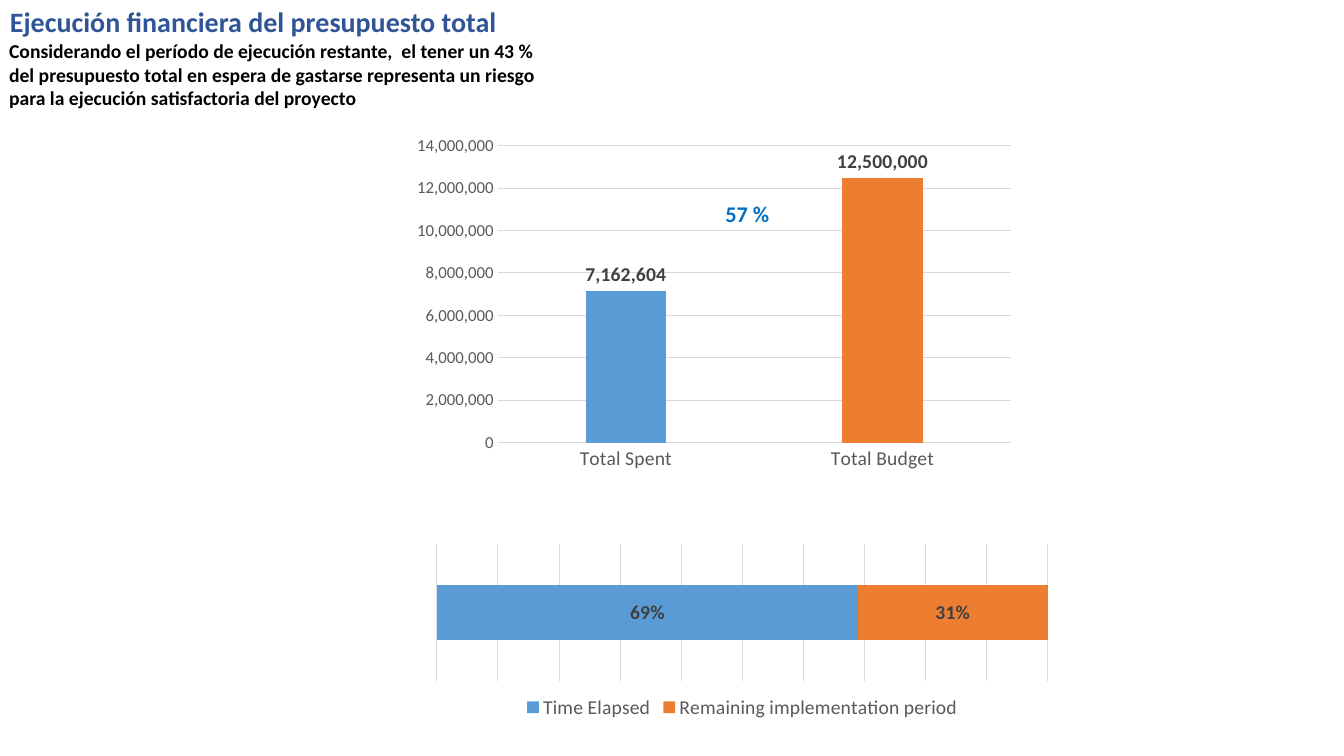
from dataclasses import dataclass

from lxml import etree
from pptx import Presentation
from pptx.chart.chart import Chart
from pptx.chart.data import CategoryChartData
from pptx.dml.color import RGBColor
from pptx.enum.chart import XL_CHART_TYPE, XL_LABEL_POSITION, XL_LEGEND_POSITION, XL_TICK_MARK
from pptx.oxml.ns import qn
from pptx.slide import Slide
from pptx.util import Cm, Pt

COLUMNS = XL_CHART_TYPE.COLUMN_CLUSTERED
STACKED_BARS = XL_CHART_TYPE.BAR_STACKED_100
ABOVE_BAR = XL_LABEL_POSITION.OUTSIDE_END
INSIDE_BAR = XL_LABEL_POSITION.CENTER
LEGEND_BELOW = XL_LEGEND_POSITION.BOTTOM
NO_TICKS = XL_TICK_MARK.NONE

FONT = "Calibri"
BLUE, ORANGE = "5B9BD5", "ED7D31"
GRID, AXIS_TEXT, LABEL_TEXT = "D9D9D9", "595959", "404040"


@dataclass(frozen=True)
class Frame:
    """Place and size in centimetres."""
    left: float
    top: float
    width: float
    height: float


@dataclass(frozen=True)
class TextItem:
    text: str
    frame: Frame
    size: int
    color: str


@dataclass(frozen=True)
class BarChart:
    kind: XL_CHART_TYPE
    frame: Frame
    plot_area: Frame  # fractions of the chart frame
    categories: tuple[str, ...]
    series: dict[str, tuple[float, ...]]
    number_format: str
    label_position: XL_LABEL_POSITION
    gap: int
    overlap: int
    scale: dict[str, float]


TEXTS = (
    TextItem("Ejecución financiera del presupuesto total",
             Frame(0, 0, 18.69, 1.47), 20, "2F5597"),
    TextItem("Considerando el período de ejecución restante,  el tener un 43 % "
             "del presupuesto total en espera de gastarse representa un riesgo "
             "para la ejecución satisfactoria del proyecto",
             Frame(-0.02, 0.86, 14.38, 1.17), 14, "000000"),
    TextItem("57 %", Frame(18.03, 4.93, 2.62, 0.94), 16, "0070C0"),
)

BUDGET = BarChart(
    COLUMNS, Frame(9.22, 3.05, 17.48, 10.39), Frame(0.19, 0.06, 0.74, 0.72),
    ("Total Spent", "Total Budget"), {"Series 1": (7162604, 12500000)},
    "#,##0", ABOVE_BAR, 219, 0,
    {"minimum_scale": 0, "maximum_scale": 14000000, "major_unit": 2000000})

TIMELINE = BarChart(
    STACKED_BARS, Frame(10.69, 13.61, 16.03, 4.62), Frame(0.02, 0.02, 0.96, 0.75),
    ("1",), {"Time Elapsed": (0.69,), "Remaining implementation period": (0.31,)},
    "0%", INSIDE_BAR, 150, 100,
    {"minimum_scale": 0, "maximum_scale": 1, "major_unit": 0.1})


def rgb(color: str) -> RGBColor:
    return RGBColor.from_string(color)


def place(frame: Frame) -> tuple[Cm, Cm, Cm, Cm]:
    return Cm(frame.left), Cm(frame.top), Cm(frame.width), Cm(frame.height)


def set_all(target: object, values: dict[str, object]) -> None:
    for name, value in values.items():
        setattr(target, name, value)


def style_font(font: object, size: int, color: str, bold: bool = False) -> None:
    set_all(font, {"name": FONT, "size": Pt(size), "bold": bold})
    font.color.rgb = rgb(color)


def style_line(line: object) -> None:
    line.color.rgb = rgb(GRID)
    line.width = Pt(0.75)


def add_text(page: Slide, item: TextItem) -> None:
    box = page.shapes.add_textbox(*place(item.frame))
    box.text_frame.word_wrap = True
    span = box.text_frame.paragraphs[0].add_run()
    span.text = item.text
    style_font(span.font, item.size, item.color, bold=True)


def fix_plot_area(chart: Chart, area: Frame) -> None:
    """Pin the inner plot area to fractions of the chart frame."""
    plot_area = chart.element.find(".//" + qn("c:plotArea"))
    for old in plot_area.findall(qn("c:layout")):
        plot_area.remove(old)
    layout = etree.Element(qn("c:layout"))
    manual = etree.SubElement(layout, qn("c:manualLayout"))
    settings = {"layoutTarget": "inner", "xMode": "edge", "yMode": "edge",
                "x": area.left, "y": area.top, "w": area.width, "h": area.height}
    for tag, value in settings.items():
        etree.SubElement(manual, qn("c:" + tag)).set("val", str(value))
    plot_area.insert(0, layout)


def add_bar_chart(page: Slide, item: BarChart) -> Chart:
    data = CategoryChartData(number_format=item.number_format)
    data.categories = item.categories
    for name, values in item.series.items():
        data.add_series(name, values)
    chart = page.shapes.add_chart(item.kind, *place(item.frame), data).chart
    set_all(chart, {"has_title": False, "has_legend": False})
    style_font(chart.font, 10, "000000")
    fix_plot_area(chart, item.plot_area)

    plot = chart.plots[0]
    set_all(plot, {"gap_width": item.gap, "overlap": item.overlap,
                   "vary_by_categories": False})
    for series, color in zip(plot.series, (BLUE, ORANGE)):
        series.format.fill.solid()
        series.format.fill.fore_color.rgb = rgb(color)
        labels = series.data_labels
        set_all(labels, {"show_value": True, "number_format": item.number_format,
                         "number_format_is_linked": False,
                         "position": item.label_position})
        style_font(labels.font, 14, LABEL_TEXT, bold=True)

    axis = chart.value_axis
    set_all(axis, {"has_major_gridlines": True, **item.scale})
    style_line(axis.major_gridlines.format.line)
    return chart


def add_budget_chart(page: Slide) -> None:
    chart = add_bar_chart(page, BUDGET)
    total_fill = chart.plots[0].series[0].points[1].format.fill
    total_fill.solid()
    total_fill.fore_color.rgb = rgb(ORANGE)
    for axis, size in ((chart.category_axis, 14), (chart.value_axis, 12)):
        set_all(axis, {"major_tick_mark": NO_TICKS, "minor_tick_mark": NO_TICKS})
        style_font(axis.tick_labels.font, size, AXIS_TEXT)
    style_line(chart.category_axis.format.line)
    chart.value_axis.format.line.fill.background()
    set_all(chart.value_axis.tick_labels,
            {"number_format": BUDGET.number_format, "number_format_is_linked": False})


def add_timeline_chart(page: Slide) -> None:
    chart = add_bar_chart(page, TIMELINE)
    for axis in (chart.category_axis, chart.value_axis):
        axis.visible = False
    chart.has_legend = True
    set_all(chart.legend, {"position": LEGEND_BELOW, "include_in_layout": False})
    style_font(chart.legend.font, 14, AXIS_TEXT)


def main() -> None:
    deck = Presentation()
    set_all(deck, {"slide_width": Cm(33.87), "slide_height": Cm(19.05)})
    page = deck.slides.add_slide(deck.slide_layouts[6])
    title, message, share = TEXTS
    add_text(page, title)
    add_budget_chart(page)
    add_text(page, message)
    add_text(page, share)
    add_timeline_chart(page)
    deck.save("out.pptx")


if __name__ == "__main__":
    main()
